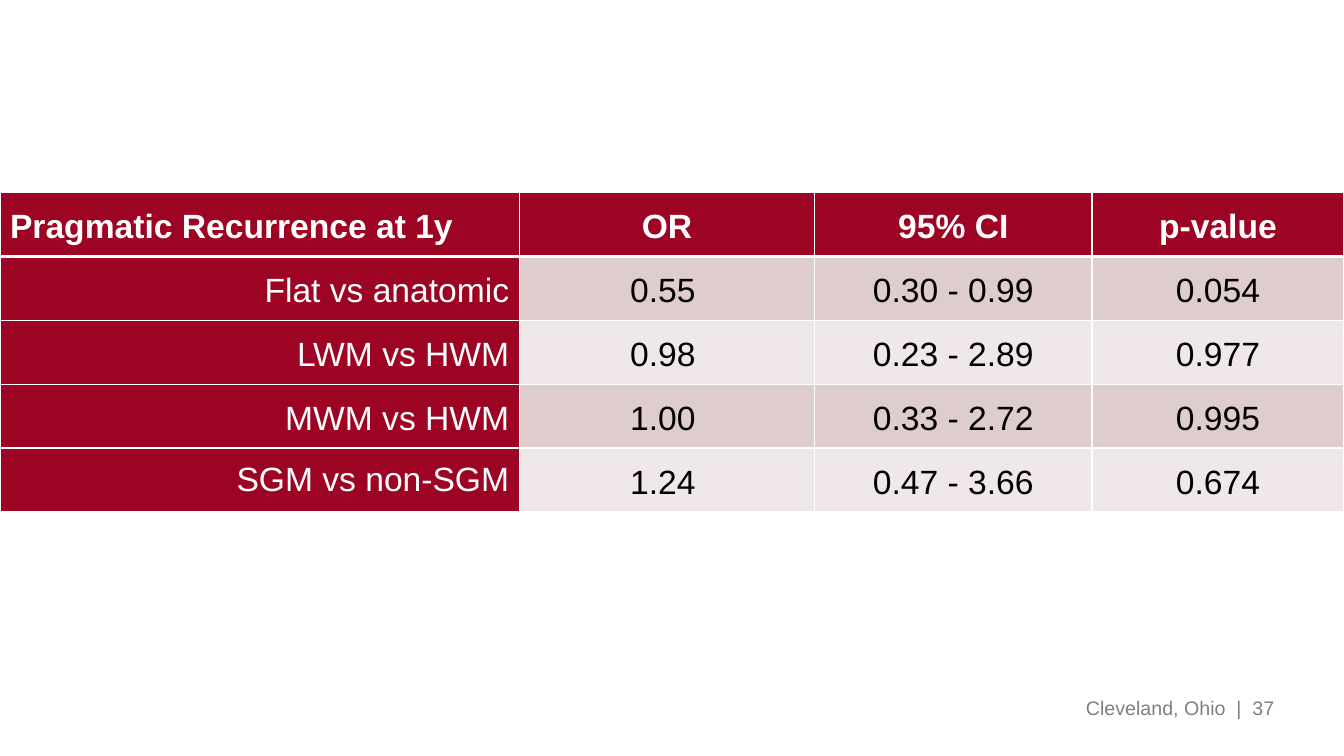
from lxml import etree
from pptx import Presentation
from pptx.dml.color import RGBColor
from pptx.enum.text import MSO_ANCHOR, PP_ALIGN
from pptx.oxml.ns import qn
from pptx.util import Inches, Pt

LEFT, CENTER, RIGHT = PP_ALIGN.LEFT, PP_ALIGN.CENTER, PP_ALIGN.RIGHT
MIDDLE = MSO_ANCHOR.MIDDLE

COLORS = {
    "crimson": "9D0424",
    "band_dark": "DFCCCD",
    "band_light": "EFE7E8",
    "white": "FFFFFF",
    "black": "000000",
    "gray": "808080",
}
COLUMN_WIDTHS = [5.15, 2.93, 2.75, 2.5]
TABLE_HEIGHT = 3.17
RESULTS = [
    ["Pragmatic Recurrence at 1y", "OR", "95% CI", "p-value"],
    ["Flat vs anatomic", "0.55", "0.30 - 0.99", "0.054"],
    ["LWM vs HWM", "0.98", "0.23 - 2.89", "0.977"],
    ["MWM vs HWM", "1.00", "0.33 - 2.72", "0.995"],
    ["SGM vs non-SGM", "1.24", "0.47 - 3.66", "0.674"],
]


class SlideBuilder:
    def __init__(self, page, font="Arial"):
        self.page = page
        self.font = font

    def text(self, para, words, size, color, align, bold=False):
        para.alignment = align
        span = para.add_run()
        span.text = words
        span.font.name = self.font
        span.font.size = Pt(size)
        span.font.bold = bold
        span.font.color.rgb = RGBColor.from_string(COLORS[color])

    def footer(self, words, left, top, width, height):
        box = self.page.shapes.add_textbox(
            Inches(left), Inches(top), Inches(width), Inches(height))
        box.text_frame.word_wrap = True
        self.text(box.text_frame.paragraphs[0], words, 14, "gray", RIGHT)

    def borders(self, cell, top, bottom):
        """Draw white cell borders; top and bottom are widths in points."""
        properties = cell._tc.get_or_add_tcPr()
        for side, width in (("L", 1), ("R", 1), ("T", top), ("B", bottom)):
            line = etree.SubElement(properties, qn(f"a:ln{side}"), w=str(Pt(width)))
            fill = etree.SubElement(line, qn("a:solidFill"))
            etree.SubElement(fill, qn("a:srgbClr"), val=COLORS["white"])

    def cell(self, cell, words, row, column, last_row):
        header, label = row == 0, column == 0
        self.borders(cell, 3 if row == 1 else 1, 3 if header else 1)
        if header or label:
            fill, color = "crimson", "white"
        else:
            fill, color = ("band_dark" if row % 2 else "band_light"), "black"
        cell.fill.solid()
        cell.fill.fore_color.rgb = RGBColor.from_string(COLORS[fill])
        cell.vertical_anchor = MIDDLE

        para = cell.text_frame.paragraphs[0]
        align = CENTER
        if label:
            align = LEFT if header else RIGHT
        elif column == 1 and not header:
            align = LEFT
            para.level = 2
            para_properties = para._p.get_or_add_pPr()
            para_properties.set("marL", str(Inches(1)))
            para_properties.set("indent", "0")
        if not (label and row == last_row):
            para.line_spacing = 1.15
            para.space_after = Pt(8)
        self.text(para, words, 24, color, align, bold=header)

    def table(self, rows, left, top, widths, height):
        table = self.page.shapes.add_table(
            len(rows), len(widths), Inches(left), Inches(top),
            Inches(sum(widths)), Inches(height)).table
        for column, width in zip(table.columns, widths):
            column.width = Inches(width)
        for row, entries in enumerate(rows):
            for column, words in enumerate(entries):
                self.cell(table.cell(row, column), words, row, column, len(rows) - 1)


def main():
    deck = Presentation()
    deck.slide_width, deck.slide_height = Inches(13.33), Inches(7.5)
    builder = SlideBuilder(deck.slides.add_slide(deck.slide_layouts[6]))
    builder.footer("Cleveland, Ohio  |  37", 10.07, 6.85, 2.67, 0.34)
    builder.table(RESULTS, 0, 1.91, COLUMN_WIDTHS, TABLE_HEIGHT)
    deck.save("out.pptx")


if __name__ == "__main__":
    main()
